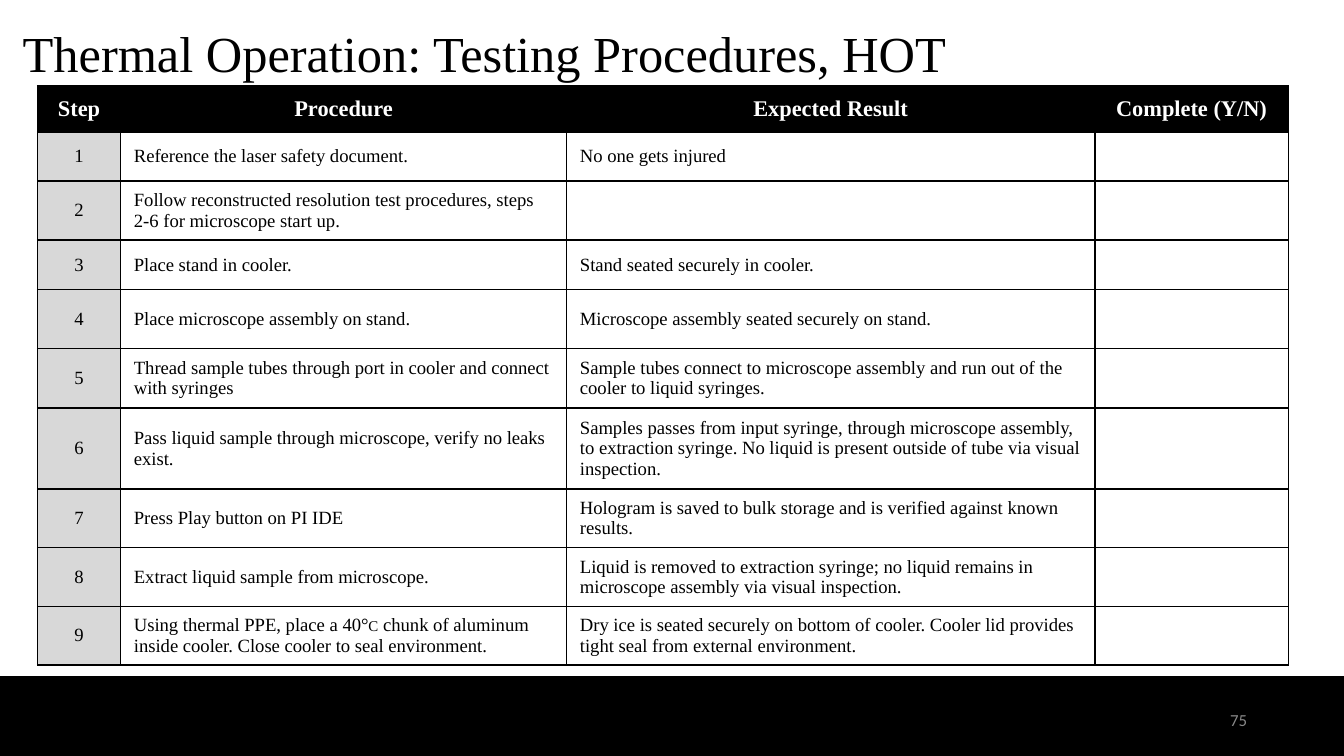
from lxml import etree
from pptx import Presentation
from pptx.dml.color import RGBColor
from pptx.enum import shapes, text
from pptx.oxml import ns
from pptx.util import Cm, Pt

ALIGN, ANCHOR = text.PP_ALIGN, text.MSO_ANCHOR
SERIF = "Times New Roman"

HEAD = ["Step", "Procedure", "Expected Result", "Complete (Y/N)"]
STEPS = [
    ("Reference the laser safety document.", "No one gets injured"),
    ("Follow reconstructed resolution test procedures, steps 2-6 for microscope start up.", ""),
    ("Place stand in cooler.", "Stand seated securely in cooler."),
    ("Place microscope assembly on stand.", "Microscope assembly seated securely on stand."),
    ("Thread sample tubes through port in cooler and connect with syringes",
     "Sample tubes connect to microscope assembly and run out of the cooler to liquid syringes."),
    ("Pass liquid sample through microscope, verify no leaks exist.",
     "Samples passes from input syringe, through microscope assembly, to extraction syringe. "
     "No liquid is present outside of tube via visual inspection."),
    ("Press Play button on PI IDE",
     "Hologram is saved to bulk storage and is verified against known results."),
    ("Extract liquid sample from microscope.",
     "Liquid is removed to extraction syringe; no liquid remains in microscope assembly "
     "via visual inspection."),
    ([("Using thermal PPE, place a 40°", 10), ("C", 8),
      (" chunk of aluminum inside cooler. Close cooler to seal environment.", 10)],
     "Dry ice is seated securely on bottom of cooler. Cooler lid provides tight seal "
     "from external environment."),
]
COLS = [1.57, 8.43, 9.98, 3.66]
ROWS = [0.87, 0.92, 1.12, 0.93, 1.12, 1.12, 1.47, 1.07, 1.07, 1.07]


def paint(code):
    return RGBColor.from_string(code)


def apply(item, form):
    for name, value in form.items():
        setattr(item, name, value)


class Deck:
    ink, paper, gray = "000000", "FFFFFF", "D8D8D8"

    def __init__(self, wide, high):
        self.prs = Presentation()
        apply(self.prs, {"slide_width": Cm(wide), "slide_height": Cm(high)})
        self.slide = self.prs.slides.add_slide(self.prs.slide_layouts[6])

    def fill_para(self, para, words, size, color, face=SERIF, bold=False, align=ALIGN.LEFT):
        para.alignment = align
        parts = [(words, size)] if isinstance(words, str) else words
        for part, points in parts:
            run = para.add_run()
            run.text = part
            apply(run.font, {"size": Pt(points), "name": face, "bold": bold})
            run.font.color.rgb = paint(color)

    def bar(self, *box):
        bar = self.slide.shapes.add_shape(shapes.MSO_SHAPE.RECTANGLE, *map(Cm, box))
        bar.shadow.inherit = False
        bar.fill.solid()
        bar.fill.fore_color.rgb = bar.line.color.rgb = paint(self.ink)
        bar.line.width = Pt(1)

    def label(self, box, words, size, color, anchor=ANCHOR.TOP, space=None, **style):
        frame = self.slide.shapes.add_textbox(*map(Cm, box)).text_frame
        sides = ("left", "top", "right", "bottom")
        apply(frame, {f"margin_{side}": Cm(0.25) for side in sides})
        apply(frame, {"word_wrap": True, "vertical_anchor": anchor})
        para = frame.paragraphs[0]
        para.line_spacing = space
        self.fill_para(para, words, size, color, **style)

    def border(self, cell):
        props = cell._tc.get_or_add_tcPr()
        for at, side in enumerate(("lnL", "lnR", "lnT", "lnB")):
            line = etree.Element(ns.qn(f"a:{side}"), w=str(Pt(1)))
            fill = etree.SubElement(line, ns.qn("a:solidFill"))
            etree.SubElement(fill, ns.qn("a:srgbClr"), val=self.ink)
            props.insert(at, line)

    def cell(self, cell, words, fill, pad, size, color, **style):
        across, down = map(Cm, pad)
        apply(cell, {"vertical_anchor": ANCHOR.MIDDLE, "margin_left": across,
                     "margin_right": across, "margin_top": down, "margin_bottom": down})
        if fill:
            cell.fill.solid()
            cell.fill.fore_color.rgb = paint(fill)
        else:
            cell.fill.background()
        self.border(cell)
        para = cell.text_frame.paragraphs[0]
        if words:
            self.fill_para(para, words, size, color, **style)
        else:  # keep empty cells from stretching their row
            para._p.get_or_add_endParaRPr().set("sz", str(size * 100))

    def table(self, left, top, cols, rows, head, steps):
        box = map(Cm, (left, top, sum(cols), sum(rows)))
        grid = self.slide.shapes.add_table(len(rows), len(cols), *box).table
        for col, wide in zip(grid.columns, cols):
            col.width = Cm(wide)
        for row, high in zip(grid.rows, rows):
            row.height = Cm(high)
        for c, words in enumerate(head):
            self.cell(grid.cell(0, c), words, self.ink, (0.08, 0.03), 12,
                      self.paper, bold=True, align=ALIGN.CENTER)
        for r, step in enumerate(steps, 1):
            for c, words in enumerate((str(r), *step, "")):
                first = c == 0
                self.cell(grid.cell(r, c), words, self.gray if first else None,
                          (0.25, 0.13), 10, self.ink,
                          align=ALIGN.CENTER if first else ALIGN.LEFT)


deck = Deck(25.4, 14.29)

# Footer band
deck.bar(0, 12.8, 25.4, 1.49)

# Title and page number
deck.label((0.18, 0.3, 23.67, 1.6), "Thermal Operation: Testing Procedures, HOT",
           27, deck.ink, space=0.9)
deck.label((22.3, 13.06, 1.52, 1.09), "75", 9, "888888", ANCHOR.MIDDLE,
           face="Calibri", align=ALIGN.RIGHT)

# Test steps
deck.table(0.71, 1.63, COLS, ROWS, HEAD, STEPS)

deck.prs.save("out.pptx")
